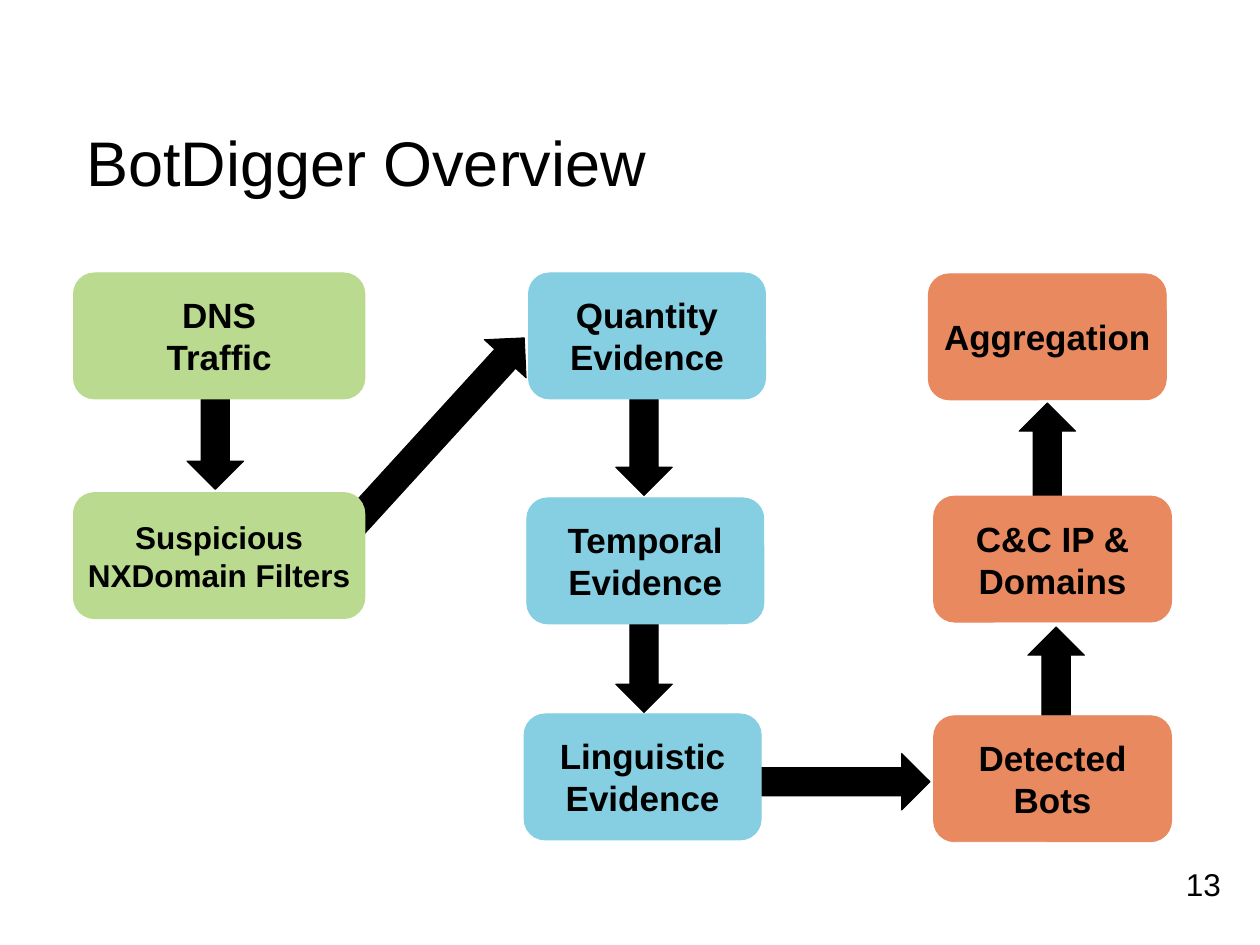
import pptx
import pptx.util
import pptx.dml.color
import pptx.enum.shapes
import pptx.enum.text

Pt = pptx.util.Pt
Color = pptx.dml.color.RGBColor
Shape = pptx.enum.shapes.MSO_SHAPE
Align = pptx.enum.text.PP_ALIGN
Anchor = pptx.enum.text.MSO_ANCHOR
Fit = pptx.enum.text.MSO_AUTO_SIZE

BLACK = Color(0x00, 0x00, 0x00)
GREEN = Color(0xB9, 0xDA, 0x8F)
BLUE = Color(0x86, 0xCF, 0xE2)
ORANGE = Color(0xE9, 0x89, 0x60)

CARD_H = 72
ARROW_H = 32.4

COLUMNS = [
    (GREEN, 166.5, [
        (42, 156, 20, ["DNS", "Traffic"]),
        (42, 281.5, 18, ["Suspicious", "NXDomain Filters"]),
    ]),
    (BLUE, 135.5, [
        (302, 156, 20, ["Quantity", "Evidence"]),
        (301, 284.5, 20, ["Temporal", "Evidence"]),
        (299.5, 408, 20, ["Linguistic", "Evidence"]),
    ]),
    (ORANGE, 136, [
        (530.5, 156.5, 20, ["Aggregation"]),
        (533.5, 283.5, 20, ["C&C IP &", "Domains"]),
        (533.5, 409, 20, ["Detected", "Bots"]),
    ]),
]

ARROWS = [
    (562.5, 250, 72, 270),
    (567.5, 378, 72, 270),
    (423.5, 430.5, 108, 0),
    (332, 355, 72, 90),
    (332, 231, 72, 90),
    (148.5, 243.5, 180.5, 312.4),
    (87, 227.5, 72, 90),
]


def write(frame, lines, size=20, bold=False, align=Align.LEFT, anchor=Anchor.TOP,
          wrap=False, space=None):
    frame.word_wrap = wrap
    frame.auto_size = Fit.NONE
    frame.vertical_anchor = anchor
    for i, line in enumerate(lines):
        para = frame.paragraphs[0] if i == 0 else frame.add_paragraph()
        para.alignment = align
        if space:
            para.line_spacing = space
        run = para.add_run()
        run.text = line
        run.font.name = "Arial"
        run.font.size = Pt(size)
        run.font.bold = bold
        run.font.color.rgb = BLACK


def draw(slide, kind, box, color):
    shape = slide.shapes.add_shape(kind, *map(Pt, box))
    shape.shadow.inherit = False
    shape.fill.solid()
    shape.fill.fore_color.rgb = color
    shape.line.color.rgb = color
    shape.line.width = Pt(0.5)
    return shape


def add_title(slide, box, text):
    title = slide.shapes.title
    title.left, title.top, title.width, title.height = map(Pt, box)
    write(title.text_frame, [text], size=36, anchor=Anchor.MIDDLE, wrap=True, space=0.9)


def add_arrow(slide, box, angle):
    draw(slide, Shape.RIGHT_ARROW, box, BLACK).rotation = angle


def add_card(slide, box, color, size, lines):
    card = draw(slide, Shape.ROUNDED_RECTANGLE, box, color)
    write(card.text_frame, lines, size=size, bold=True, align=Align.CENTER,
          anchor=Anchor.MIDDLE)


def add_number(slide, box, text):
    note = slide.shapes.add_textbox(*map(Pt, box))
    write(note.text_frame, [text], size=18)


def main():
    deck = pptx.Presentation()
    deck.slide_width, deck.slide_height = Pt(720), Pt(540)
    slide = deck.slides.add_slide(deck.slide_layouts[5])
    add_title(slide, (42, 56, 661, 78), "BotDigger Overview")
    for left, top, width, angle in ARROWS:
        add_arrow(slide, (left, top, width, ARROW_H), angle)
    for color, width, cards in COLUMNS:
        for left, top, size, lines in cards:
            add_card(slide, (left, top, width, CARD_H), color, size, lines)
    add_number(slide, (670.5, 490.5, 34.5, 29), "13")
    deck.save("out.pptx")


if __name__ == "__main__":
    main()
